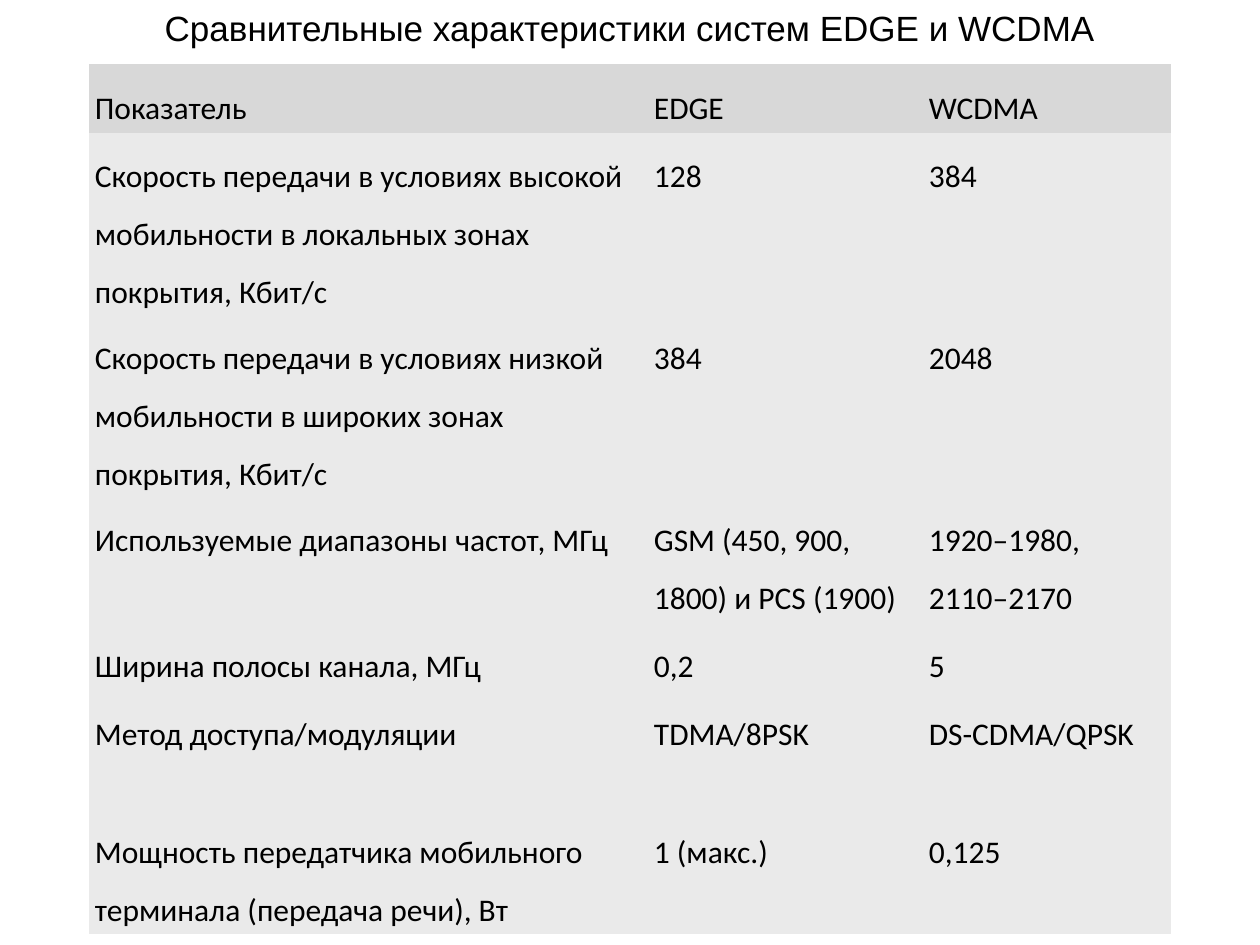
"""Build a slide with a table comparing the EDGE and WCDMA systems."""
from pptx import Presentation
from pptx.dml.color import RGBColor
from pptx.enum.text import MSO_ANCHOR, PP_ALIGN
from pptx.oxml.ns import qn
from pptx.util import Pt

SCALE = 914400 / 126
BLACK = RGBColor(0x00, 0x00, 0x00)
HEADER_GRAY = RGBColor(0xD8, 0xD8, 0xD8)
BODY_GRAY = RGBColor(0xEA, 0xEA, 0xEA)
NO_STYLE_NO_GRID = "{2D5ABB26-0587-4C30-8999-92F81FD0307C}"
TITLE_FONT = {"name": "Arial", "size": Pt(20)}
CELL_FONT = {"name": "Calibri", "size": Pt(18)}
COLUMN_WIDTHS = [559, 275, 248]
ROW_HEIGHTS = [68, 180, 180, 123, 68, 118, 123]
ROWS = [
    ("Показатель", "EDGE", "WCDMA"),
    ("Скорость передачи в условиях высокой мобильности в локальных зонах покрытия, Кбит/c", "128", "384"),
    ("Скорость передачи в условиях низкой мобильности в широких зонах покрытия, Кбит/c", "384", "2048"),
    ("Используемые диапазоны частот, МГц", "GSM (450, 900, 1800) и PCS (1900)", "1920–1980, 2110–2170"),
    ("Ширина полосы канала, МГц", "0,2", "5"),
    ("Метод доступа/модуляции", "TDMA/8PSK", "DS-CDMA/QPSK"),
    ("Мощность передатчика мобильного терминала (передача речи), Вт", "1 (макс.)", "0,125"),
]


def px(length):
    """Turn pixels into EMU."""
    return round(length * SCALE)


def write(paragraph, text, font_format):
    """Add a black run of text with the given font values."""
    run = paragraph.add_run()
    run.text = text
    run.font.color.rgb = BLACK
    for name, value in font_format.items():
        setattr(run.font, name, value)


presentation = Presentation()
presentation.slide_width = px(1260)
presentation.slide_height = px(945)
slide = presentation.slides.add_slide(presentation.slide_layouts[6])

title = slide.shapes.add_textbox(0, 0, px(1260), px(55)).text_frame
title.word_wrap = True
title.vertical_anchor = MSO_ANCHOR.MIDDLE
title.paragraphs[0].alignment = PP_ALIGN.CENTER
write(title.paragraphs[0], "Сравнительные характеристики систем EDGE и WCDMA", TITLE_FONT)

table = slide.shapes.add_table(
    len(ROWS), len(COLUMN_WIDTHS), px(89), px(64), px(sum(COLUMN_WIDTHS)), px(sum(ROW_HEIGHTS))
).table
table.first_row = False
table.horz_banding = False
table._tbl.tblPr.find(qn("a:tableStyleId")).text = NO_STYLE_NO_GRID
for column, width in zip(table.columns, COLUMN_WIDTHS):
    column.width = px(width)
for row, height in zip(table.rows, ROW_HEIGHTS):
    row.height = px(height)

for row_index, texts in enumerate(ROWS):
    for column_index, text in enumerate(texts):
        cell = table.cell(row_index, column_index)
        for side in ("left", "top", "right", "bottom"):
            setattr(cell, f"margin_{side}", px(6))
        cell.fill.solid()
        cell.fill.fore_color.rgb = BODY_GRAY if row_index else HEADER_GRAY
        paragraph = cell.text_frame.paragraphs[0]
        paragraph.line_spacing = 1.5
        write(paragraph, text, CELL_FONT)

presentation.save("out.pptx")
